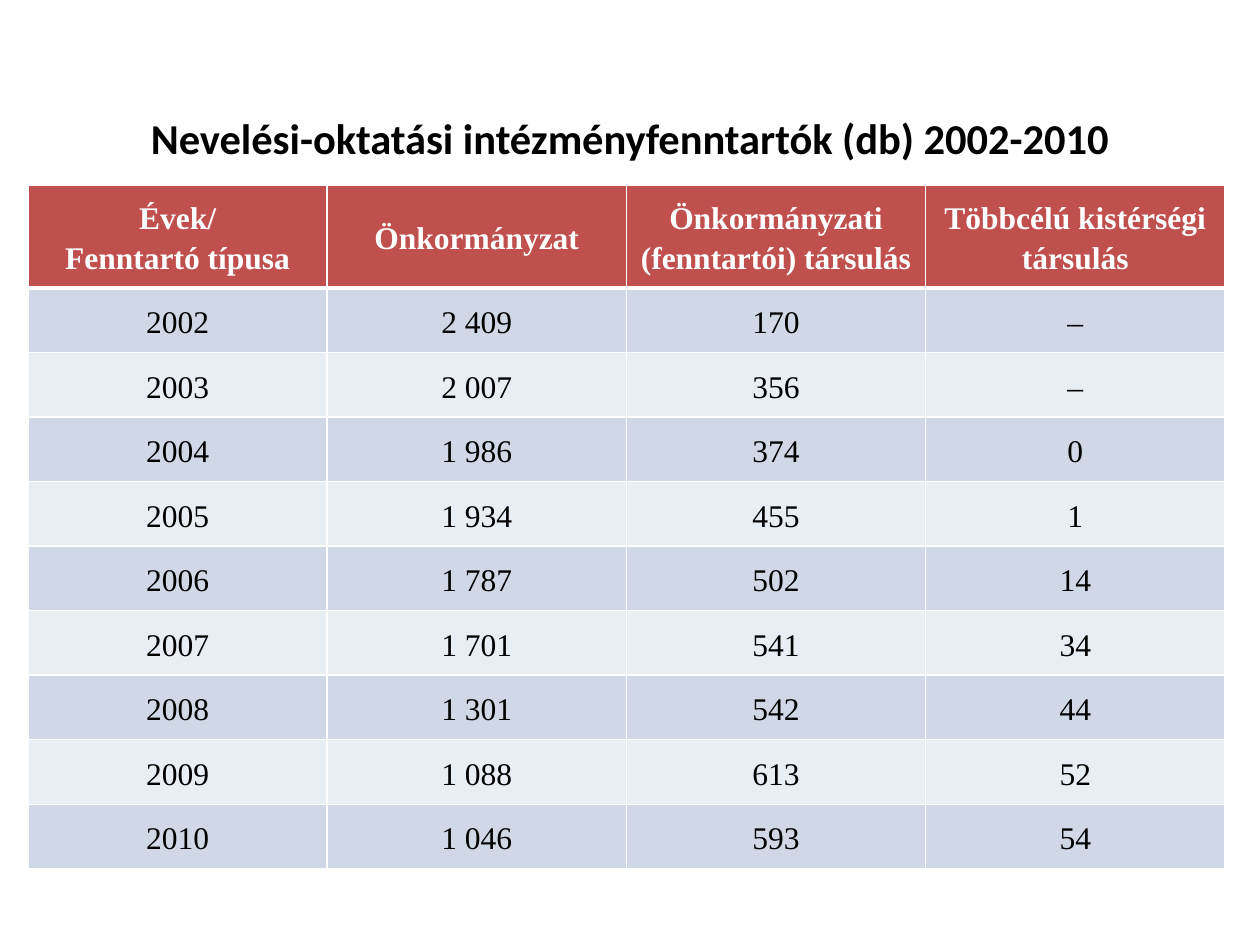
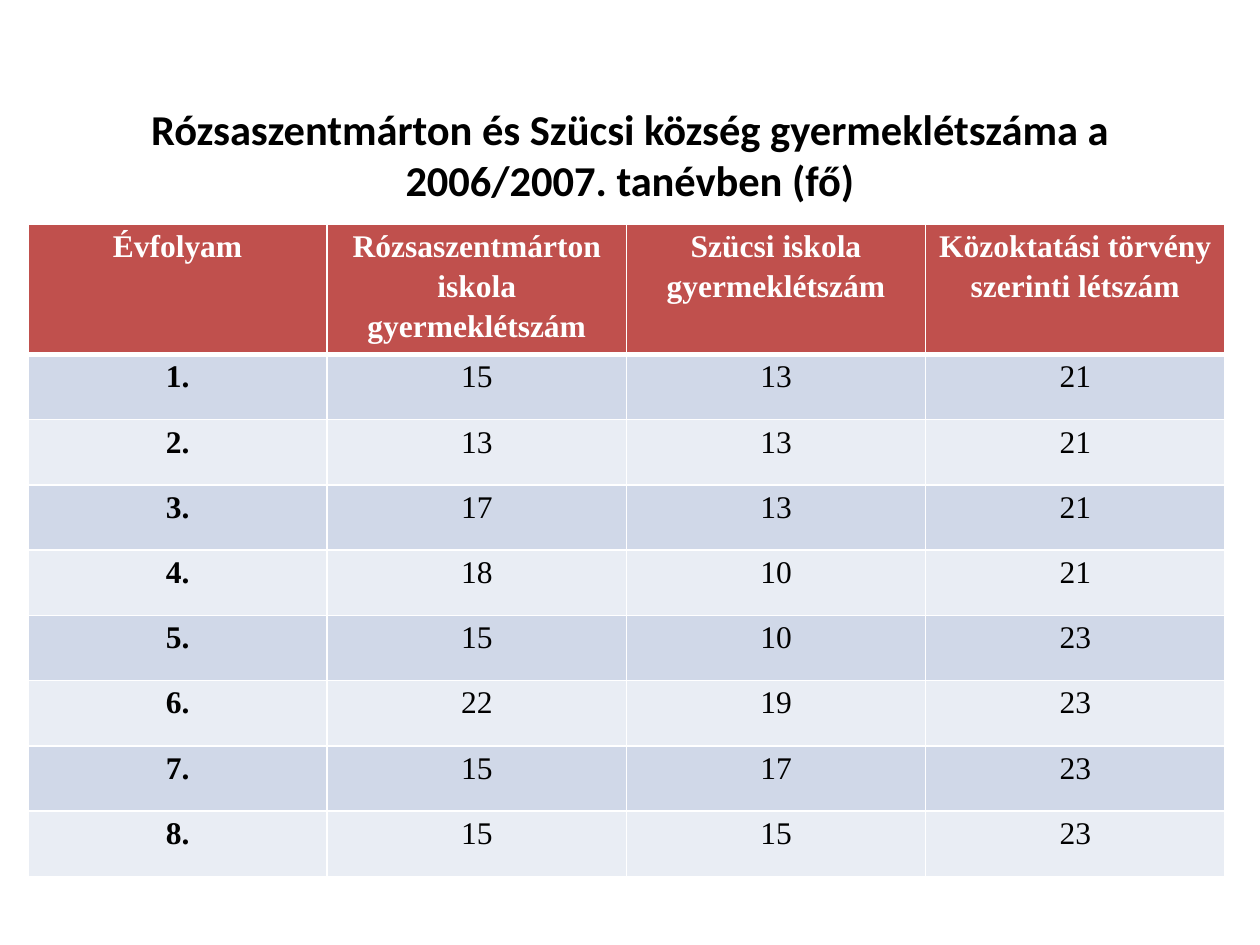
from lxml.etree import SubElement
from pptx import Presentation
from pptx.dml.color import RGBColor
from pptx.enum.text import MSO_ANCHOR, PP_ALIGN
from pptx.oxml.ns import qn
from pptx.util import Pt

SCALE = 914400 / 126
COLORS = {
    "white": "FFFFFF",
    "black": "000000",
    "header": "C0504D",
    "odd": "D0D8E8",
    "even": "E9EDF4",
}


def px(length):
    return round(length * SCALE)


def write(frame, text, *, font, size, color="black", bold=False, spacing=None):
    para = frame.paragraphs[0]
    para.text = text
    para.alignment = PP_ALIGN.CENTER
    if spacing:
        para.line_spacing = spacing
    for span in para.runs:
        span.font.name = font
        span.font.size = Pt(size)
        span.font.bold = bold
        span.font.color.rgb = RGBColor.from_string(COLORS[color])


class TableDeck:
    title_format = {"font": "Calibri", "size": 24.3, "bold": True}
    cell_format = {"font": "Times New Roman", "size": 18, "spacing": 1.15}

    def __init__(self):
        self.deck = Presentation()
        self.deck.slide_width = px(1260)
        self.deck.slide_height = px(945)
        self.page = None

    def add_page(self):
        self.page = self.deck.slides.add_slide(self.deck.slide_layouts[6])

    def add_title(self, text, top, height, inset):
        box = self.page.shapes.add_textbox(px(63), px(top), px(1134), px(height))
        frame = box.text_frame
        frame.word_wrap = True
        frame.vertical_anchor = MSO_ANCHOR.TOP
        frame.margin_top = px(inset)
        frame.margin_bottom = 0
        write(frame, text, **self.title_format)

    def add_borders(self, cell, top, bottom):
        properties = cell._tc.get_or_add_tcPr()
        for side, width in (("L", 1), ("R", 1), ("T", top), ("B", bottom)):
            line = SubElement(properties, qn(f"a:ln{side}"), w=str(Pt(width)))
            fill = SubElement(line, qn("a:solidFill"))
            SubElement(fill, qn("a:srgbClr"), val=COLORS["white"])

    def add_table(self, rows, top, height, header_height, side_inset, edge_inset,
                  anchor, bold_labels=False):
        columns = len(rows[0])
        table = self.page.shapes.add_table(
            len(rows), columns, px(28), px(top), px(1197), px(height)
        ).table
        table.horz_banding = False
        for column in table.columns:
            column.width = px(1197 / columns)
        body_height = (height - header_height) / (len(rows) - 1)
        for row_index, values in enumerate(rows):
            header = row_index == 0
            table.rows[row_index].height = px(header_height if header else body_height)
            band = "header" if header else "odd" if row_index % 2 else "even"
            for column_index, value in enumerate(values):
                cell = table.cell(row_index, column_index)
                cell.margin_left = cell.margin_right = px(side_inset)
                cell.margin_top = cell.margin_bottom = px(edge_inset)
                cell.vertical_anchor = anchor
                self.add_borders(cell, 3 if row_index == 1 else 1, 3 if header else 1)
                cell.fill.solid()
                cell.fill.fore_color.rgb = RGBColor.from_string(COLORS[band])
                write(
                    cell.text_frame, value,
                    color="white" if header else "black",
                    bold=header or (bold_labels and column_index == 0),
                    **self.cell_format,
                )


MAINTAINERS = [
    ("Évek/\nFenntartó típusa", "Önkormányzat",
     "Önkormányzati\n(fenntartói) társulás", "Többcélú kistérségi társulás"),
    ("2002", "2 409", "170", "–"),
    ("2003", "2 007", "356", "–"),
    ("2004", "1 986", "374", "0"),
    ("2005", "1 934", "455", "1"),
    ("2006", "1 787", "502", "14"),
    ("2007", "1 701", "541", "34"),
    ("2008", "1 301", "542", "44"),
    ("2009", "1 088", "613", "52"),
    ("2010", "1 046", "593", "54"),
]

PUPILS = [
    ("Évfolyam", "Rózsaszentmárton iskola gyermeklétszám",
     "Szücsi iskola gyermeklétszám", "Közoktatási törvény szerinti létszám"),
    ("1.", "15", "13", "21"),
    ("2.", "13", "13", "21"),
    ("3.", "17", "13", "21"),
    ("4.", "18", "10", "21"),
    ("5.", "15", "10", "23"),
    ("6.", "22", "19", "23"),
    ("7.", "15", "17", "23"),
    ("8.", "15", "15", "23"),
]


def main():
    show = TableDeck()

    show.add_page()
    show.add_title("Nevelési-oktatási intézményfenntartók (db) 2002-2010",
                   top=65, height=110, inset=47)
    show.add_table(MAINTAINERS, top=185, height=684, header_height=103,
                   side_inset=1, edge_inset=1, anchor=MSO_ANCHOR.MIDDLE)

    show.add_page()
    show.add_title("Rózsaszentmárton és Szücsi község gyermeklétszáma a "
                   "2006/2007. tanévben (fő)", top=38, height=170, inset=65)
    show.add_table(PUPILS, top=224, height=645, header_height=123,
                   side_inset=9, edge_inset=0, anchor=MSO_ANCHOR.TOP,
                   bold_labels=True)

    show.deck.save("out.pptx")


if __name__ == "__main__":
    main()
